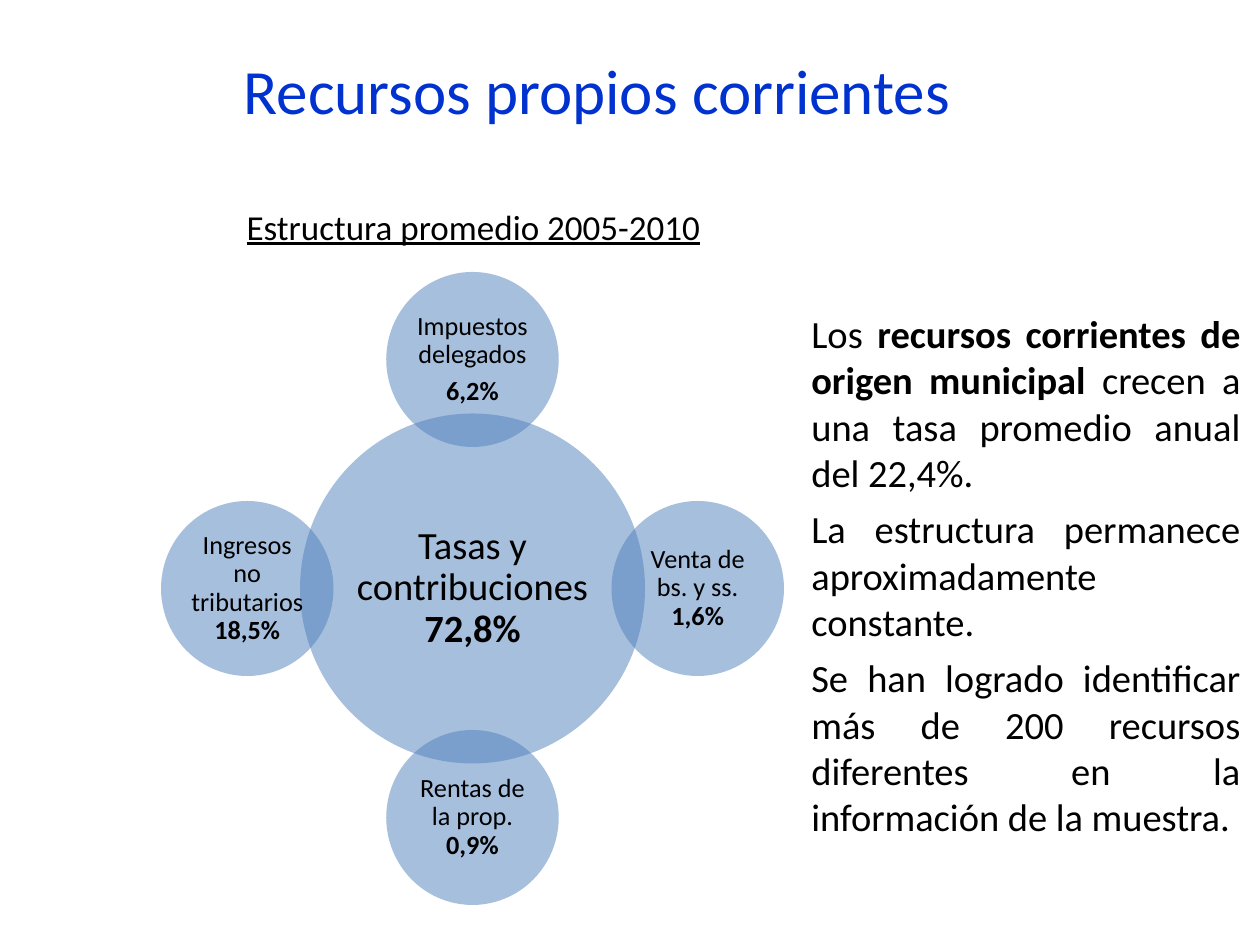
import lxml.etree
import pptx
import pptx.dml.color
import pptx.enum.shapes
import pptx.enum.text
import pptx.oxml.ns
import pptx.util

PX = 914400 / 126
FONT = "Calibri"
TITLE_BLUE = pptx.dml.color.RGBColor(0x00, 0x32, 0xD0)
CIRCLE_BLUE = pptx.dml.color.RGBColor(0x4F, 0x81, 0xBD)
BLACK = pptx.dml.color.RGBColor(0x00, 0x00, 0x00)
ALIGN = pptx.enum.text.PP_ALIGN
ANCHOR = pptx.enum.text.MSO_ANCHOR


def emu(*lengths):
    return [pptx.util.Emu(round(length * PX)) for length in lengths]


def write(shape, paragraphs, size, color=BLACK, align=ALIGN.LEFT, anchor=ANCHOR.TOP,
          underline=None, before=0, after=0, line=None, inset=None):
    """Fill a shape with paragraphs, each a list of (text, bold) spans."""
    frame = shape.text_frame
    frame.word_wrap = True
    frame.auto_size = pptx.enum.text.MSO_AUTO_SIZE.NONE
    frame.vertical_anchor = anchor
    if inset is not None:
        frame.margin_left, frame.margin_top, frame.margin_right, frame.margin_bottom = emu(*[inset] * 4)
    for index, spans in enumerate(paragraphs):
        para = frame.add_paragraph() if index else frame.paragraphs[0]
        para.alignment = align
        para.space_before = pptx.util.Pt(before if index else 0)
        para.space_after = pptx.util.Pt(after if index < len(paragraphs) - 1 else 0)
        if line:
            para.line_spacing = line
        for text, bold in spans:
            span = para.add_run()
            span.text = text
            span.font.name = FONT
            span.font.size = pptx.util.Pt(size)
            span.font.bold = bold
            span.font.underline = underline
            span.font.color.rgb = color


def add_title(page, left, top, width, height):
    title = page.shapes.title
    title.left, title.top, title.width, title.height = emu(left, top, width, height)
    write(title, [[("Recursos propios corrientes", False)]], 36,
          color=TITLE_BLUE, anchor=ANCHOR.MIDDLE)


def add_caption(page, left, top, width, height):
    box = page.shapes.add_textbox(*emu(left, top, width, height))
    write(box, [[("Estructura promedio 2005-2010", False)]], 20,
          align=ALIGN.CENTER, underline=True)


def add_comments(page, left, top, width, height):
    box = page.shapes.add_textbox(*emu(left, top, width, height))
    write(box, [
        [("Los ", False), ("recursos corrientes de origen municipal ", True),
         ("crecen a una tasa promedio anual del 22,4%.", False)],
        [("La estructura permanece aproximadamente constante.", False)],
        [("Se han logrado identificar más de 200 recursos diferentes "
          "en la información de la muestra.", False)],
    ], 22, align=ALIGN.JUSTIFY, before=6)


def add_circle(group, center_x, center_y, width, height, paragraphs, size, inset):
    circle = group.shapes.add_shape(
        pptx.enum.shapes.MSO_SHAPE.OVAL,
        *emu(center_x - width / 2, center_y - height / 2, width, height))
    circle.shadow.inherit = False
    circle.line.fill.background()
    circle.fill.solid()
    circle.fill.fore_color.rgb = CIRCLE_BLUE
    fill_color = circle._element.spPr.find(".//" + pptx.oxml.ns.qn("a:srgbClr"))
    lxml.etree.SubElement(fill_color, pptx.oxml.ns.qn("a:alpha"), val="50000")
    write(circle, paragraphs, size, align=ALIGN.CENTER, anchor=ANCHOR.MIDDLE,
          after=5, line=0.9, inset=inset)


def add_radial_diagram(page, left, top, width, height):
    """Place a hub circle with four half-size circles on the box's edges."""
    group = page.shapes.add_group_shape()
    center_x, center_y = left + width / 2, top + height / 2
    hub_width, hub_height = 345, 350
    small_width, small_height = hub_width / 2, hub_height / 2
    reach_x, reach_y = (width - small_width) / 2, (height - small_height) / 2
    add_circle(group, center_x, center_y, hub_width, hub_height,
               [[("Tasas y contribuciones ", False), ("72,8%", True)]], 22, 4)
    satellites = [
        (0, -1, [[("Impuestos delegados", False)], [("6,2%", True)]]),
        (1, 0, [[("Venta de bs. y ss. ", False), ("1,6%", True)]]),
        (0, 1, [[("Rentas de la prop. ", False), ("0,9%", True)]]),
        (-1, 0, [[("Ingresos no tributarios ", False), ("18,5%", True)]]),
    ]
    for step_x, step_y, paragraphs in satellites:
        add_circle(group, center_x + step_x * reach_x, center_y + step_y * reach_y,
                   small_width, small_height, paragraphs, 15, 2)


def main():
    deck = pptx.Presentation()
    deck.slide_width, deck.slide_height = emu(1260, 945)
    page = deck.slides.add_slide(deck.slide_layouts.get_by_name("Title Only"))
    add_title(page, 231, 10, 966, 158)
    add_comments(page, 799, 304, 454, 527)
    add_radial_diagram(page, 161, 272, 623, 633)
    add_caption(page, 231, 199, 485, 57)
    deck.save("out.pptx")


if __name__ == "__main__":
    main()
